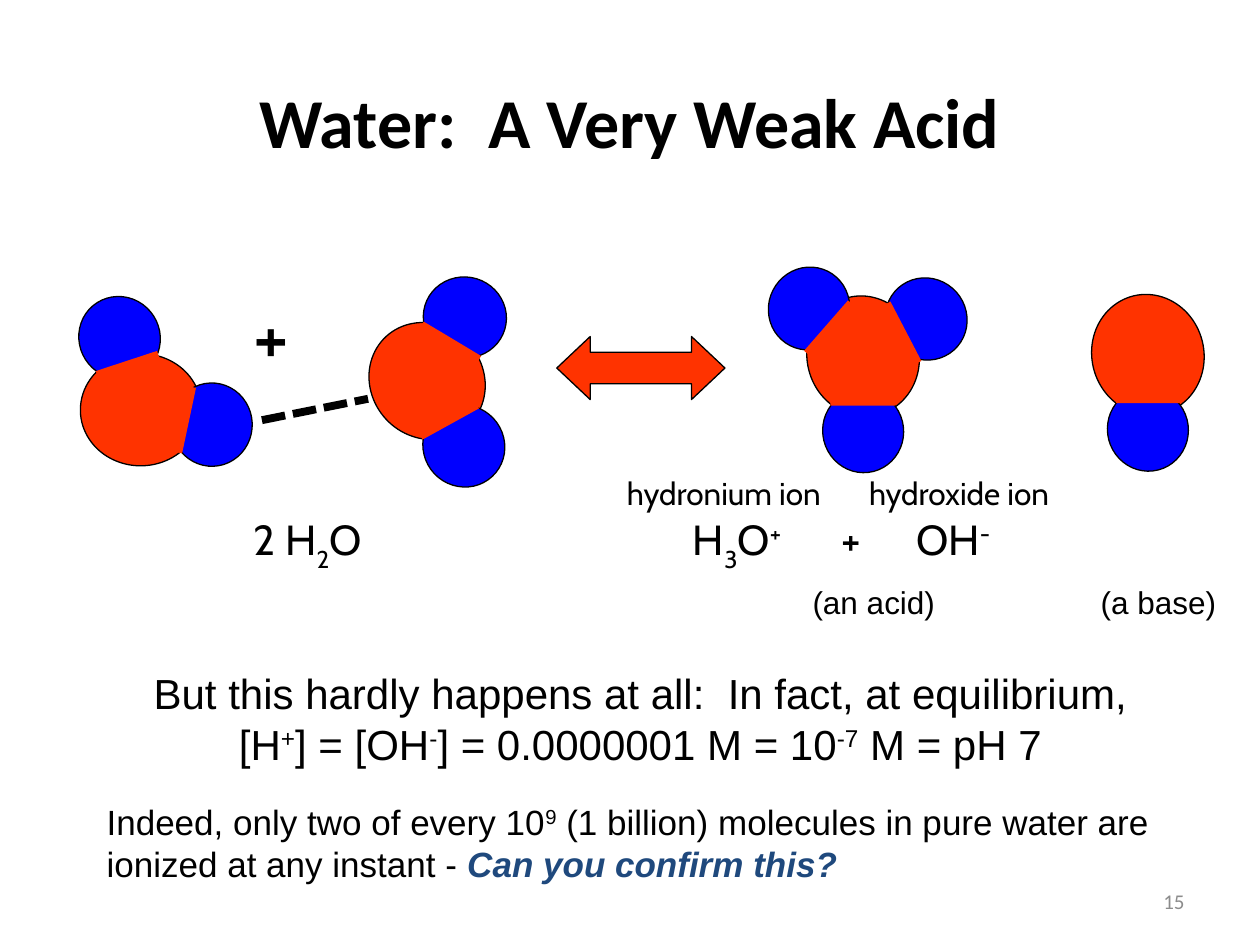
import pptx
import pptx.dml.color
import pptx.enum.dml
import pptx.enum.shapes
import pptx.enum.text
import pptx.util
from lxml import etree

Cm, Pt = pptx.util.Cm, pptx.util.Pt
SHAPE = pptx.enum.shapes.MSO_SHAPE
ANCHOR = pptx.enum.text.MSO_ANCHOR
ALIGN = pptx.enum.text.PP_ALIGN
NS = "http://schemas.openxmlformats.org/drawingml/2006/main"

RED, BLUE, BLACK, GREY, NAVY = "FF3300", "0000FF", "000000", "8C8C8C", "1F497D"
OXYGEN = (2.44, 2.26)
HYDROGEN = {"wide": (1.68, 1.63), "tall": (1.63, 1.68)}
BOND = {"wide": (1.3, 0.66), "tall": (1.35, 0.66)}

MOLECULES = [
    {"oxygen": (2.84, 8.26, 178.3),
     "hydrogens": [("tall", (4.27, 8.56, 177.7), (3.49, 8.41, 282)),
                   ("wide", (2.41, 6.81, 57.5), (2.65, 7.59, 161.8))]},
    {"oxygen": (17.4, 7.18, 255.7),
     "hydrogens": [("wide", (17.4, 8.69, 255.7), (17.39, 7.85, 0)),
                   ("tall", (18.67, 6.43, 138.3), (17.97, 6.83, 242.5)),
                   ("tall", (16.31, 6.22, 26.8), (16.9, 6.78, 131.1))]},
    {"oxygen": (23.14, 7.15, 256.2),
     "hydrogens": [("wide", (23.14, 8.66, 255.7), (23.15, 7.8, 0))]},
    {"oxygen": (8.61, 7.68, 227.4),
     "hydrogens": [("wide", (9.35, 8.99, 226.9), (8.93, 8.26, 331.1)),
                   ("tall", (9.37, 6.4, 106.6), (8.95, 7.11, 210.9))]},
]

SUB, SUP = {"base": -30}, {"base": 30}
CABIN = {"name": "Cabin", "size": 24}
ARIAL = {"name": "Arial", "size": 24}
EQUATION = [
    {"font": {**CABIN, "size": 44}, "tabs": [1.9], "runs": [("\t+", {})]},
    {"font": {**CABIN, "size": 18}, "before": 54, "tabs": [9.42, 14.3],
     "runs": [("\thydronium ion\thydroxide ion", {})]},
    {"font": CABIN, "before": 1, "tabs": [1.9, 10.75, 13.75, 15.25],
     "runs": [("\t2 H", {}), ("2", SUB), ("O\tH", {}), ("3", SUB), ("O", {}),
              ("+", SUP), ("\t+\tOH", {}), ("-", SUP)]},
    {"font": {**ARIAL, "size": 18}, "before": 6, "tabs": [13.16, 18.97],
     "runs": [("\t(an acid)\t(a base)", {})]},
]
EXPLANATION = [
    {"font": ARIAL, "align": ALIGN.CENTER,
     "runs": [("But this hardly happens at all:  In fact, at equilibrium,", {})]},
    {"font": ARIAL, "align": ALIGN.CENTER,
     "runs": [("[H", {}), ("+", SUP), ("] = [OH", {}), ("-", SUP),
              ("] = 0.0000001 M = 10", {}), ("-7", SUP), (" M = pH 7", {})]},
    {"font": {**ARIAL, "size": 20}, "before": 18,
     "runs": [("Indeed, only two of every 10", {}), ("9", SUP),
              (" (1 billion) molecules in pure water are ionized at any instant - ", {}),
              ("Can you confirm this?", {"color": NAVY, "bold": True, "italic": True})]},
]
TITLE = [{"font": {"name": "Calibri", "size": 40, "bold": True}, "align": ALIGN.CENTER,
          "runs": [("Water:  A Very Weak Acid", {})]}]
NUMBER = [{"font": {"name": "Calibri", "size": 12, "color": GREY}, "align": ALIGN.RIGHT,
           "runs": [("15", {})]}]


def rgb(value):
    """Turn a hex string into a colour."""
    return pptx.dml.color.RGBColor.from_string(value)


def add_run(p, text, fmt):
    """Add one formatted run to a paragraph."""
    r = p.add_run()
    r.text = text
    fmt = {**fmt, "size": Pt(fmt["size"])}
    r.font.color.rgb = rgb(fmt.pop("color", BLACK))
    base = fmt.pop("base", 0)
    for key, value in fmt.items():
        setattr(r.font, key, value)
    if base:
        r._r.get_or_add_rPr().set("baseline", str(base * 1000))


def fill_text(sp, paragraphs, anchor):
    """Write formatted paragraphs into a shape."""
    tf = sp.text_frame
    tf.word_wrap, tf.vertical_anchor = True, anchor
    for i, item in enumerate(paragraphs):
        p = tf.add_paragraph() if i else tf.paragraphs[0]
        p.alignment = item.get("align", ALIGN.LEFT)
        p.space_before = Pt(item.get("before", 0))
        if "tabs" in item:
            tabs = etree.SubElement(p._p.get_or_add_pPr(), f"{{{NS}}}tabLst")
            for pos in item["tabs"]:
                etree.SubElement(tabs, f"{{{NS}}}tab", pos=str(Cm(pos)), algn="l")
        for text, fmt in item["runs"]:
            add_run(p, text, {**item["font"], **fmt})


def add_text(s, box, paragraphs, anchor=ANCHOR.TOP):
    """Add a text box."""
    fill_text(s.shapes.add_textbox(*map(Cm, box)), paragraphs, anchor)


def add_part(shapes, kind, center, size, color, outlined=True):
    """Add a filled shape placed by its centre and rotation."""
    (x, y, rotation), (w, h) = center, size
    sp = shapes.add_shape(kind, Cm(x - w / 2), Cm(y - h / 2), Cm(w), Cm(h))
    sp.rotation = rotation
    sp.shadow.inherit = False
    sp.fill.solid()
    sp.fill.fore_color.rgb = rgb(color)
    if outlined:
        sp.line.color.rgb = rgb(BLACK)
        sp.line.width = Pt(0.75)
    else:
        sp.line.fill.background()
    return sp


def add_molecule(s, oxygen, hydrogens):
    """Add a grouped molecule with bonds covering the overlaps."""
    shapes = s.shapes.add_group_shape().shapes
    add_part(shapes, SHAPE.OVAL, oxygen, OXYGEN, RED)
    for form, atom, bond in hydrogens:
        add_part(shapes, SHAPE.OVAL, atom, HYDROGEN[form], BLUE)
        add_part(shapes, SHAPE.RECTANGLE, bond, BOND[form], RED, outlined=False)


def main():
    """Build and save the slide."""
    prs = pptx.Presentation()
    prs.slide_width, prs.slide_height = Cm(25.4), Cm(19.05)
    s = prs.slides.add_slide(prs.slide_layouts[5])
    title = s.shapes.title
    for key, value in {"left": 2.11, "top": 0.84, "width": 21.16, "height": 3.18}.items():
        setattr(title, key, Cm(value))
    fill_text(title, TITLE, ANCHOR.MIDDLE)
    add_text(s, (18.21, 17.65, 5.92, 1.02), NUMBER, ANCHOR.MIDDLE)
    add_text(s, (1.9, 13.34, 22.02, 4.65), EXPLANATION)
    add_text(s, (2.97, 2.67, 22.86, 9.98), EQUATION, ANCHOR.BOTTOM)
    for molecule in MOLECULES:
        add_molecule(s, **molecule)
    arrow = add_part(s.shapes, SHAPE.LEFT_RIGHT_ARROW, (12.92, 7.42, 0), (3.39, 1.27), RED)
    arrow.adjustments[0], arrow.adjustments[1] = 0.5, 0.53
    bond = s.shapes.add_connector(pptx.enum.shapes.MSO_CONNECTOR.STRAIGHT,
                                  Cm(5.28), Cm(8.47), Cm(7.42), Cm(8.04))
    bond.line.color.rgb = rgb(BLACK)
    bond.line.width = Pt(4.5)
    bond.line.dash_style = pptx.enum.dml.MSO_LINE.SQUARE_DOT
    etree.SubElement(bond._element.spPr, f"{{{NS}}}effectLst")
    prs.save("out.pptx")


if __name__ == "__main__":
    main()
